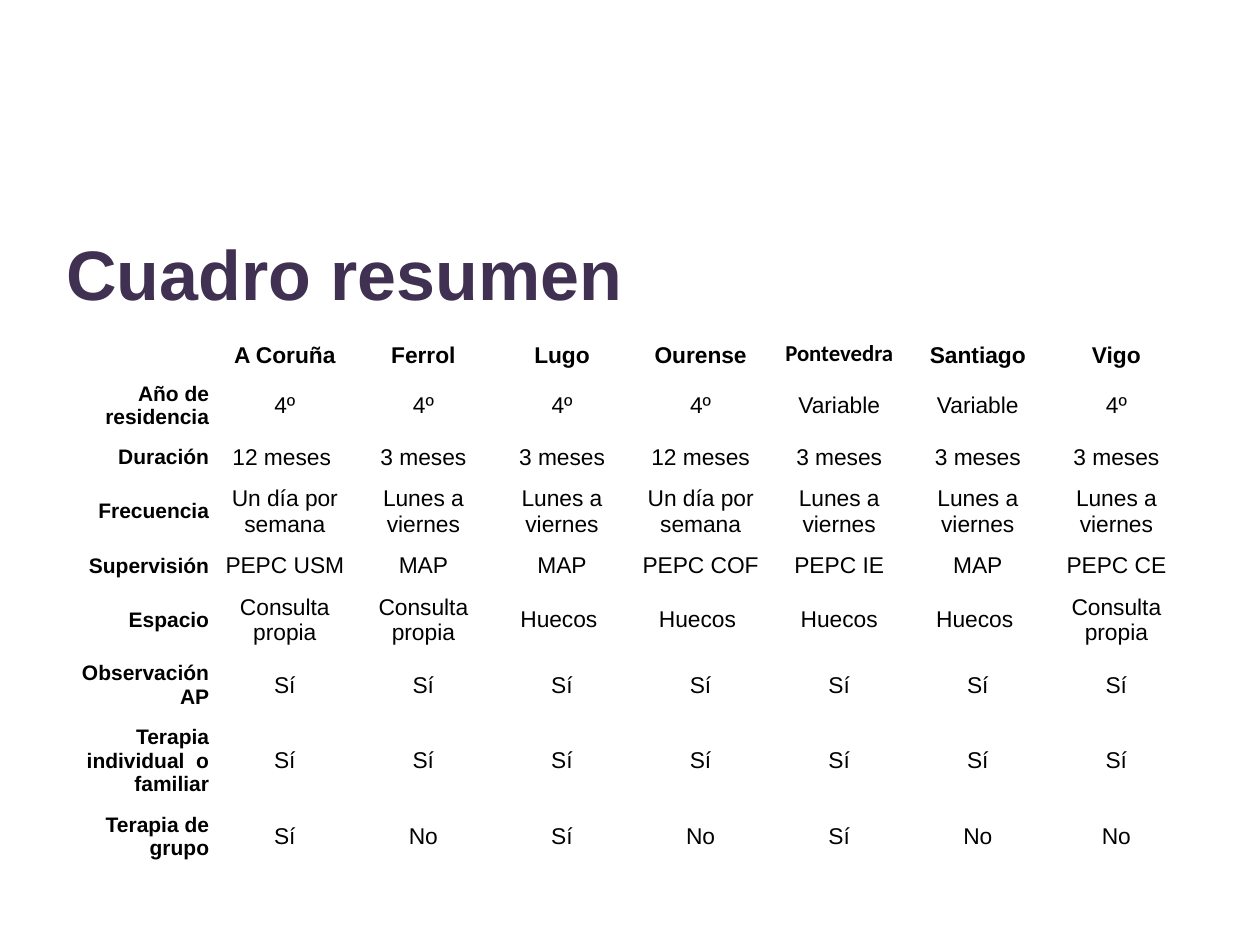
from pptx import Presentation
from pptx.dml.color import RGBColor
from pptx.enum.text import MSO_ANCHOR, MSO_AUTO_SIZE, PP_ALIGN
from pptx.util import Inches, Pt

LEFT, CENTER, RIGHT = PP_ALIGN.LEFT, PP_ALIGN.CENTER, PP_ALIGN.RIGHT
MIDDLE, BOTTOM = MSO_ANCHOR.MIDDLE, MSO_ANCHOR.BOTTOM
FIT_SHAPE = MSO_AUTO_SIZE.SHAPE_TO_FIT_TEXT

CITIES = ["A Coruña", "Ferrol", "Lugo", "Ourense", "Pontevedra", "Santiago", "Vigo"]
WEEKDAYS = "Lunes a viernes"
WEEKLY = "Un día por semana"
OWN_ROOM = "Consulta propia"

# Row label, row height, one value for each city
ROWS = [
    ("Año de residencia", 0.5, ["4º"] * 4 + ["Variable"] * 2 + ["4º"]),
    ("Duración", 0.32, ["12 meses ", "3 meses", "3 meses", "12 meses"] + ["3 meses"] * 3),
    ("Frecuencia", 0.54, [WEEKLY, WEEKDAYS, WEEKDAYS, WEEKLY] + [WEEKDAYS] * 3),
    ("Supervisión", 0.32,
     ["PEPC USM", "MAP", "MAP", "PEPC COF", "PEPC IE", "MAP", "PEPC CE"]),
    ("Espacio", 0.54,
     [OWN_ROOM, OWN_ROOM, "Huecos ", "Huecos ", "Huecos", "Huecos ", OWN_ROOM]),
    ("Observación AP", 0.32, ["Sí"] * 7),
    ("Terapia individual  o familiar", 0.7, ["Sí"] * 7),
    ("Terapia de grupo", 0.5, ["Sí", "No", "Sí", "No", "Sí", "No", "No"]),
]
HEADER_HEIGHT = 0.32
LABEL_WIDTH, CITY_WIDTH = 1.2, 1.1


def color(hex_string):
    return RGBColor.from_string(hex_string)


class SummarySlide:
    font = "Arial"
    header_fonts = {"Pontevedra": "Calibri"}
    title_color = "403152"
    text_color = "000000"
    cell_margin = 0.05

    def __init__(self, presentation):
        self.slide = presentation.slides.add_slide(presentation.slide_layouts[6])

    def add_text(self, paragraph, text, size, hex_string, bold, align, font=None):
        paragraph.alignment = align
        run = paragraph.add_run()
        run.text = text
        run.font.name = font or self.font
        run.font.size = Pt(size)
        run.font.bold = bold
        run.font.color.rgb = color(hex_string)

    def title(self, text, left, top, width, height):
        shape = self.slide.shapes.add_textbox(
            Inches(left), Inches(top), Inches(width), Inches(height))
        frame = shape.text_frame
        frame.word_wrap = True
        frame.auto_size = FIT_SHAPE
        self.add_text(frame.paragraphs[0], text, 40, self.title_color, True, LEFT)

    def cell(self, cell, text, size=13, bold=False, align=CENTER, anchor=MIDDLE, font=None):
        margin = Inches(self.cell_margin)
        cell.margin_left = cell.margin_right = margin
        cell.margin_top = cell.margin_bottom = margin
        cell.vertical_anchor = anchor
        self.add_text(cell.text_frame.paragraphs[0], text, size, self.text_color,
                      bold, align, font)

    def table(self, left, top):
        widths = [LABEL_WIDTH] + [CITY_WIDTH] * len(CITIES)
        heights = [HEADER_HEIGHT] + [height for _, height, _ in ROWS]
        table = self.slide.shapes.add_table(
            len(heights), len(widths), Inches(left), Inches(top),
            Inches(sum(widths)), Inches(sum(heights))).table
        table.first_row = table.horz_banding = False
        for column, width in zip(table.columns, widths):
            column.width = Inches(width)
        for row, height in zip(table.rows, heights):
            row.height = Inches(height)
        for cell in table.iter_cells():
            cell.fill.background()

        # Header row; the empty corner must not stretch it
        corner = table.cell(0, 0)
        corner.margin_top = corner.margin_bottom = 0
        corner.text_frame.paragraphs[0].font.size = Pt(13)
        for column, city in enumerate(CITIES, 1):
            self.cell(table.cell(0, column), city, bold=True, anchor=BOTTOM,
                      font=self.header_fonts.get(city))

        # Label and values of each row
        for row, (label, _, values) in enumerate(ROWS, 1):
            self.cell(table.cell(row, 0), label, size=12, bold=True, align=RIGHT)
            for column, value in enumerate(values, 1):
                self.cell(table.cell(row, column), value)


def main():
    presentation = Presentation()
    presentation.slide_width = Inches(10)
    presentation.slide_height = Inches(7.5)
    summary = SummarySlide(presentation)
    summary.title("Cuadro resumen", 0.43, 1.78, 6.46, 0.77)
    summary.table(0.51, 2.65)
    presentation.save("out.pptx")


if __name__ == "__main__":
    main()
